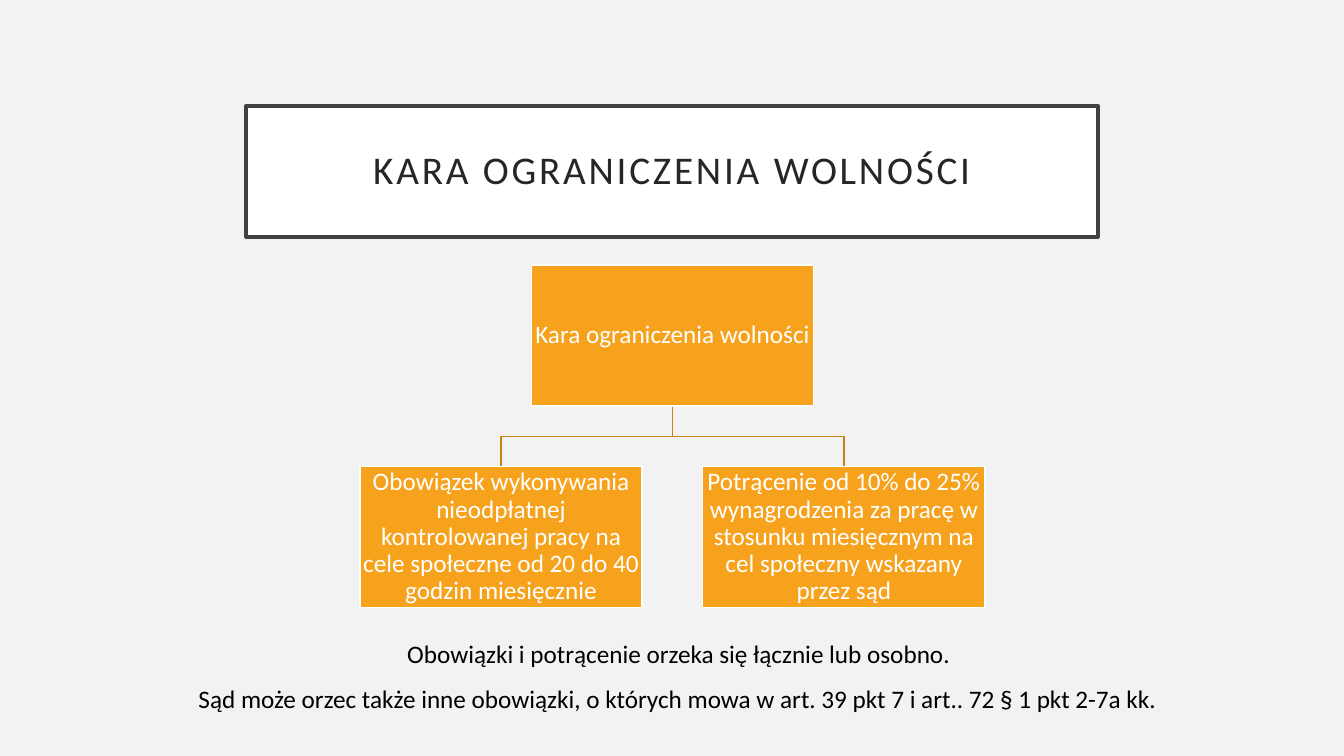
from pptx import Presentation
from pptx.dml.color import RGBColor
from pptx.enum.shapes import MSO_SHAPE
from pptx.enum.text import MSO_ANCHOR, MSO_AUTO_SIZE, PP_ALIGN
from pptx.util import Inches, Pt

BACKGROUND = RGBColor(0xF2, 0xF2, 0xF2)
WHITE = RGBColor(0xFF, 0xFF, 0xFF)
BLACK = RGBColor(0x00, 0x00, 0x00)
TITLE_TEXT = RGBColor(0x26, 0x26, 0x26)
TITLE_BORDER = RGBColor(0x40, 0x40, 0x40)
ORANGE = RGBColor(0xF6, 0xA2, 0x1D)
DARK_ORANGE = RGBColor(0xC5, 0x82, 0x17)

# Diagram geometry in inches
BOX_W, BOX_H = 2.8, 1.4
CENTER_X = 6.67
PARENT_TOP, CHILD_TOP = 2.63, 4.63
CHILD_OFFSET = 1.7

CHILDREN = [
    (-1, "Obowiązek wykonywania nieodpłatnej kontrolowanej pracy na cele "
         "społeczne od 20 do 40 godzin miesięcznie"),
    (1, "Potrącenie od 10% do 25% wynagrodzenia za pracę w stosunku "
        "miesięcznym na cel społeczny wskazany przez sąd"),
]
NOTES = [
    (3.94, 6.28, 5.79, "Obowiązki i potrącenie orzeka się łącznie lub osobno."),
    (1.87, 6.73, 9.92, "Sąd może orzec także inne obowiązki, o których mowa "
                       "w art. 39 pkt 7 i art.. 72 § 1 pkt 2-7a kk."),
]


def set_text(sp, text, size, color, margin=None, centered=True):
    """Write one formatted paragraph into a shape."""
    tf = sp.text_frame
    tf.word_wrap = True
    if margin is not None:
        for side in ("left", "top", "right", "bottom"):
            setattr(tf, f"margin_{side}", Inches(margin))
    p = tf.paragraphs[0]
    if centered:
        tf.vertical_anchor = MSO_ANCHOR.MIDDLE
        p.alignment = PP_ALIGN.CENTER
        p.line_spacing = 0.9
    r = p.add_run()
    r.text = text
    for name, value in {"name": "Calibri", "size": Pt(size), "bold": False}.items():
        setattr(r.font, name, value)
    r.font.color.rgb = color
    return r


def set_outline(sp, color, width):
    sp.line.color.rgb = color
    sp.line.width = Pt(width)


def add_title(s, text):
    sp = s.shapes.title
    frame = {"left": 2.44, "top": 1.05, "width": 8.45, "height": 1.3}
    for name, value in frame.items():
        setattr(sp, name, Inches(value))
    sp.fill.solid()
    sp.fill.fore_color.rgb = WHITE
    set_outline(sp, TITLE_BORDER, 2.5)
    r = set_text(sp, text, 28, TITLE_TEXT, margin=0.2)
    sp.text_frame.auto_size = MSO_AUTO_SIZE.NONE
    r.font._element.set("spc", "200")  # letter spacing of 2 pt


def add_box(s, center_x, top, text):
    sp = s.shapes.add_shape(MSO_SHAPE.RECTANGLE, Inches(center_x - BOX_W / 2),
                            Inches(top), Inches(BOX_W), Inches(BOX_H))
    sp.shadow.inherit = False
    sp.fill.solid()
    sp.fill.fore_color.rgb = ORANGE
    set_outline(sp, WHITE, 1)
    set_text(sp, text, 18, WHITE, margin=0.01)


def add_branch(s, child_x):
    """Draw the bent line from the parent box down to a child box."""
    start_y = PARENT_TOP + BOX_H
    bend_y = (start_y + CHILD_TOP) / 2
    points = [(CENTER_X, bend_y), (child_x, bend_y), (child_x, CHILD_TOP)]
    builder = s.shapes.build_freeform(Inches(CENTER_X), Inches(start_y))
    builder.add_line_segments([(Inches(x), Inches(y)) for x, y in points], close=False)
    sp = builder.convert_to_shape()
    sp.shadow.inherit = False
    sp.fill.background()
    set_outline(sp, DARK_ORANGE, 1)


def add_note(s, left, top, width, text):
    sp = s.shapes.add_textbox(Inches(left), Inches(top), Inches(width), Inches(0.4))
    set_text(sp, text, 18, BLACK, centered=False)
    sp.text_frame.auto_size = MSO_AUTO_SIZE.SHAPE_TO_FIT_TEXT


def main():
    prs = Presentation()
    prs.slide_width, prs.slide_height = Inches(13.33), Inches(7.5)
    s = prs.slides.add_slide(prs.slide_layouts[5])
    s.background.fill.solid()
    s.background.fill.fore_color.rgb = BACKGROUND

    add_title(s, "KARA OGRANICZENIA WOLNOŚCI")

    # Hierarchy: branches behind, boxes in front
    for side, _ in CHILDREN:
        add_branch(s, CENTER_X + side * CHILD_OFFSET)
    add_box(s, CENTER_X, PARENT_TOP, "Kara ograniczenia wolności")
    for side, text in CHILDREN:
        add_box(s, CENTER_X + side * CHILD_OFFSET, CHILD_TOP, text)

    # Notes under the diagram
    for note in NOTES:
        add_note(s, *note)

    prs.save("out.pptx")


if __name__ == "__main__":
    main()
